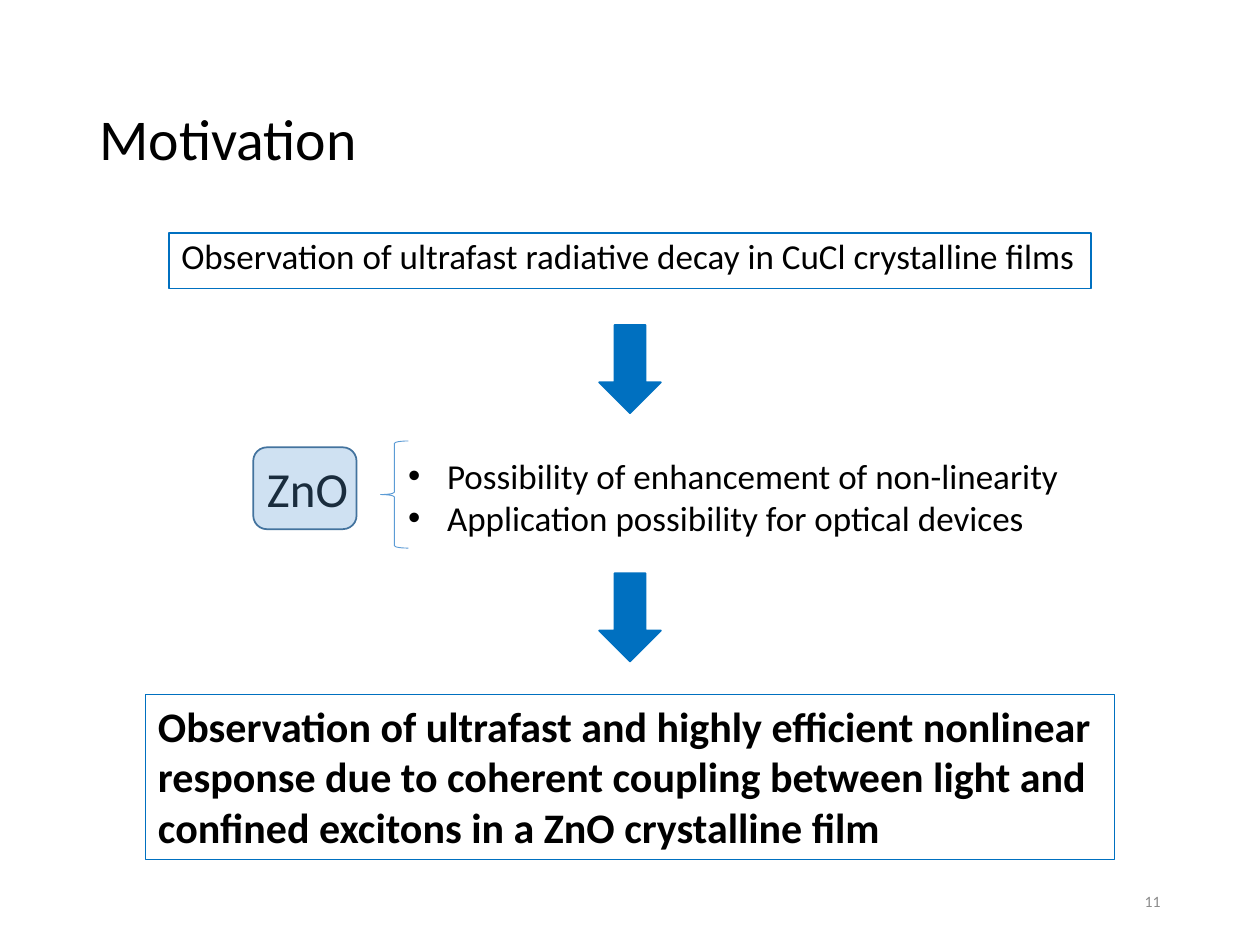
from lxml.etree import SubElement
from pptx import Presentation
from pptx.dml.color import RGBColor
from pptx.enum.shapes import MSO_SHAPE as SHAPE
from pptx.enum.text import MSO_ANCHOR as ANCHOR, MSO_AUTO_SIZE as AUTO, PP_ALIGN as ALIGN
from pptx.oxml.ns import qn
from pptx.util import Inches, Pt

WIDTH, HEIGHT = 10, 7.5
FONT = "Calibri"
BLACK = RGBColor(0x00, 0x00, 0x00)
GRAY = RGBColor(0x8C, 0x8C, 0x8C)
BLUE = RGBColor(0x00, 0x70, 0xC0)
LIGHT_BLUE = RGBColor(0x5B, 0x9B, 0xD5)
STEEL = RGBColor(0x43, 0x73, 0x9E)

TITLE = "Motivation"
PREMISE = "Observation of ultrafast radiative decay in CuCl crystalline films"
MATERIAL = "ZnO"
REASONS = [
    "Possibility of enhancement of non-linearity",
    "Application possibility for optical devices",
]
GOAL = ("Observation of ultrafast and highly efficient nonlinear response due to "
        "coherent coupling between light and confined excitons in a ZnO crystalline film")
PAGE = "11"

ARROW_TOPS = [2.58, 4.55]
ARROW_SIZE = (0.49, 0.7)


def centered(top, width, height):
    """Return a box centred across the slide."""
    return (WIDTH - width) / 2, top, width, height


def write(sp, lines, size, color=BLACK, bold=False, align=ALIGN.LEFT, anchor=ANCHOR.TOP):
    """Fill a shape with one paragraph per line and return the paragraphs."""
    tf = sp.text_frame
    tf.word_wrap = True
    tf.auto_size = AUTO.NONE
    tf.vertical_anchor = anchor
    for i, line in enumerate(lines):
        p = tf.add_paragraph() if i else tf.paragraphs[0]
        p.alignment = align
        r = p.add_run()
        r.text = line
        r.font.name, r.font.size, r.font.bold = FONT, Pt(size), bold
        r.font.color.rgb = color
    return tf.paragraphs


def add_text(s, box, lines, size, border=None, **style):
    """Add a text box, outlined when a border colour is given."""
    sp = s.shapes.add_textbox(*map(Inches, box))
    if border is not None:
        sp.line.color.rgb, sp.line.width = border, Pt(0.75)
    return write(sp, lines, size, **style)


def add_shape(s, kind, box, line, weight, fill=None, alpha=None):
    """Add a preset shape with an optional translucent fill."""
    sp = s.shapes.add_shape(kind, *map(Inches, box))
    sp.shadow.inherit = False
    sp.line.color.rgb, sp.line.width = line, Pt(weight)
    if fill is None:
        sp.fill.background()
        return
    sp.fill.solid()
    sp.fill.fore_color.rgb = fill
    if alpha is not None:
        clr = sp.fill._xPr.find(qn("a:solidFill"))[0]
        SubElement(clr, qn("a:alpha")).set("val", str(alpha * 1000))


def add_bullet(p, indent):
    """Give a paragraph a round bullet with a hanging indent."""
    pPr = p._p.get_or_add_pPr()
    pPr.set("marL", str(Inches(indent)))
    pPr.set("indent", str(-Inches(indent)))
    SubElement(pPr, qn("a:buFont")).set("typeface", "Arial")
    SubElement(pPr, qn("a:buChar")).set("char", "•")


def main():
    """Build the motivation slide."""
    prs = Presentation()
    prs.slide_width, prs.slide_height = Inches(WIDTH), Inches(HEIGHT)
    s = prs.slides.add_slide(prs.slide_layouts[5])

    title = s.shapes.title
    title.left, title.top, title.width, title.height = map(Inches, centered(0.4, 8.62, 1.45))
    write(title, [TITLE], 33, anchor=ANCHOR.MIDDLE)[0].line_spacing = 0.9

    premise = add_text(s, centered(1.85, 7.32, 0.44), [PREMISE], 20, border=BLUE)[0]
    premise.line_spacing, premise.space_before = 0.9, Pt(7.5)

    add_text(s, (7.06, 6.95, 2.25, 0.4), [PAGE], 9, color=GRAY,
             align=ALIGN.RIGHT, anchor=ANCHOR.MIDDLE)
    add_text(s, centered(5.51, 7.69, 1.31), [GOAL], 24, border=BLUE, bold=True)

    for p in add_text(s, (3.14, 3.56, 5.76, 0.77), REASONS, 20):
        add_bullet(p, 0.31)
    add_text(s, (2.02, 3.59, 0.87, 0.57), [MATERIAL], 28)
    add_shape(s, SHAPE.LEFT_BRACE, (3.02, 3.5, 0.22, 0.85), LIGHT_BLUE, 0.5)
    add_shape(s, SHAPE.ROUNDED_RECTANGLE, (2.01, 3.55, 0.82, 0.65), STEEL, 1,
              fill=LIGHT_BLUE, alpha=29)

    for top in ARROW_TOPS:
        add_shape(s, SHAPE.DOWN_ARROW, centered(top, *ARROW_SIZE), BLUE, 1, fill=BLUE)

    prs.save("out.pptx")


if __name__ == "__main__":
    main()
